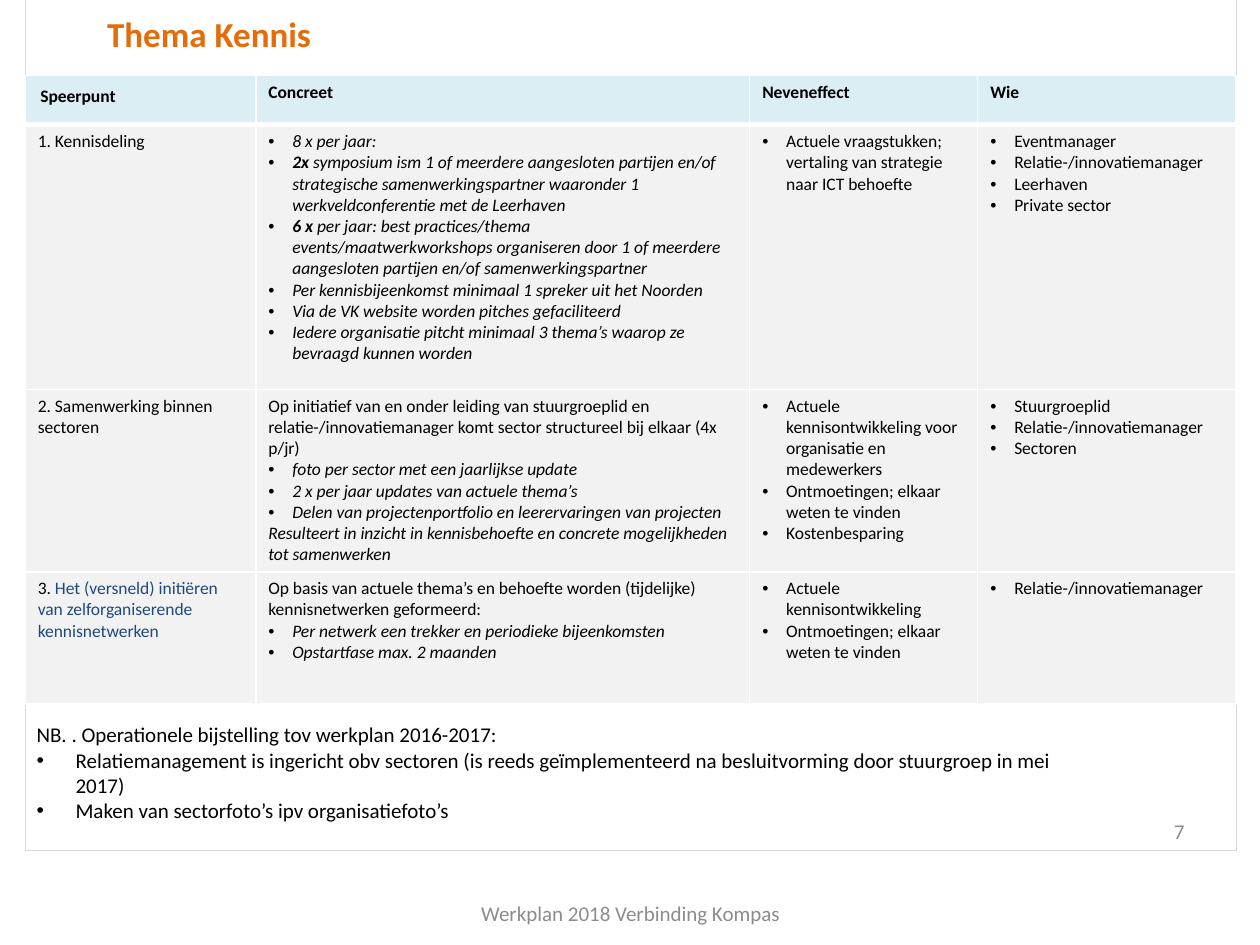
"""Build the knowledge theme slide of a work plan: title, table of priorities, notes and footer."""
from lxml import etree
from pptx import Presentation
from pptx import util as u
from pptx.dml.color import RGBColor
from pptx.enum import shapes, text
from pptx.oxml import ns

WIDTH, HEIGHT = 10, 7.5
FONT = "Calibri"
COLORS = {
    "title": "E46C0A", "text": "000000", "accent": "1F497D", "muted": "8C8C8C",
    "header": "DBEEF4", "body": "F2F2F2", "border": "FFFFFF", "frame": "D9D9D9",
}
COLUMNS = (18.3, 39.2, 18.1, 20.5)
ROWS = (5.2, 28, 19.1, 14)
HEADERS = ("Speerpunt", "Concreet", "Neveneffect", "Wie")


def across(percent):
    return u.Inches(WIDTH * percent / 100)


def down(percent):
    return u.Inches(HEIGHT * percent / 100)


def color(name):
    return RGBColor.from_string(COLORS[name])


def plain(*runs):
    return False, runs


def bullet(*runs):
    return True, runs


def bullets(*lines):
    return [bullet(line) for line in lines]


def italic(line):
    return line, {"italic": True}


def strong(line):
    return line, {"italic": True, "bold": True}


def italic_bullets(*lines):
    return [bullet(italic(line)) for line in lines]


CONTENT = (
    (
        [plain("1. Kennisdeling")],
        [
            bullet(italic("8 x per jaar:")),
            bullet(strong("2x "), italic(
                "symposium ism 1 of meerdere aangesloten partijen en/of strategische "
                "samenwerkingspartner waaronder 1 werkveldconferentie met de Leerhaven")),
            bullet(strong("6 x "), italic(
                "per jaar: best practices/thema events/maatwerkworkshops organiseren door "
                "1 of meerdere aangesloten partijen en/of samenwerkingspartner")),
            *italic_bullets(
                "Per kennisbijeenkomst minimaal 1 spreker uit het Noorden",
                "Via de VK website worden pitches gefaciliteerd",
                "Iedere organisatie pitcht minimaal 3 thema’s waarop ze bevraagd kunnen worden"),
        ],
        bullets("Actuele vraagstukken; vertaling van strategie naar ICT behoefte"),
        bullets("Eventmanager", "Relatie-/innovatiemanager", "Leerhaven", "Private sector"),
    ),
    (
        [plain("2. Samenwerking binnen sectoren")],
        [
            plain("Op initiatief van en onder leiding van stuurgroeplid en "
                  "relatie-/innovatiemanager komt sector structureel bij elkaar (4x p/jr)"),
            *italic_bullets(
                "foto per sector met een jaarlijkse update",
                "2 x per jaar updates van actuele thema’s",
                "Delen van projectenportfolio en leerervaringen van projecten"),
            plain(italic("Resulteert in inzicht in kennisbehoefte en concrete "
                         "mogelijkheden tot samenwerken")),
        ],
        bullets("Actuele kennisontwikkeling voor organisatie en medewerkers",
                "Ontmoetingen; elkaar weten te vinden", "Kostenbesparing"),
        bullets("Stuurgroeplid", "Relatie-/innovatiemanager", "Sectoren"),
    ),
    (
        [plain("3. ", ("Het (versneld) initiëren van zelforganiserende kennisnetwerken",
                       {"ink": "accent"}))],
        [
            plain("Op basis van actuele thema’s en behoefte worden (tijdelijke) "
                  "kennisnetwerken geformeerd:"),
            *italic_bullets("Per netwerk een trekker en periodieke bijeenkomsten",
                            "Opstartfase max. 2 maanden"),
        ],
        bullets("Actuele kennisontwikkeling", "Ontmoetingen; elkaar weten te vinden"),
        bullets("Relatie-/innovatiemanager"),
    ),
)
NOTES = [
    plain("NB. . Operationele bijstelling tov werkplan 2016-2017:"),
    *bullets("Relatiemanagement is ingericht obv sectoren (is reeds geïmplementeerd na "
             "besluitvorming door stuurgroep in mei 2017)",
             "Maken van sectorfoto’s ipv organisatiefoto’s"),
]


def add_run(paragraph, line, size, ink="text", bold=False, italic=False):
    run = paragraph.add_run()
    run.text = line
    font = run.font
    font.name, font.size, font.bold, font.italic = FONT, u.Pt(size), bold, italic
    font.color.rgb = color(ink)


def set_marker(paragraph, bulleted, indent):
    properties = paragraph._p.get_or_add_pPr()
    hang = u.Inches(indent) if bulleted else 0
    properties.set("marL", str(hang))
    properties.set("indent", str(-hang))
    if bulleted:
        etree.SubElement(properties, ns.qn("a:buFont"), typeface="Arial")
        etree.SubElement(properties, ns.qn("a:buChar"), char="•")
    else:
        etree.SubElement(properties, ns.qn("a:buNone"))


def fill_text(frame, paragraphs, size, indent=0.19, align=text.PP_ALIGN.LEFT, **style):
    for index, (bulleted, runs) in enumerate(paragraphs):
        paragraph = frame.add_paragraph() if index else frame.paragraphs[0]
        paragraph.alignment = align
        paragraph.space_before = u.Pt(0)
        set_marker(paragraph, bulleted, indent)
        for run in runs:
            line, extra = (run, {}) if isinstance(run, str) else run
            add_run(paragraph, line, size, **{**style, **extra})


def place(shape, left, top, width, height, anchor=text.MSO_ANCHOR.TOP):
    shape.left, shape.top = across(left), down(top)
    shape.width, shape.height = across(width), down(height)
    frame = shape.text_frame
    frame.word_wrap = True
    frame.auto_size = text.MSO_AUTO_SIZE.NONE
    frame.vertical_anchor = anchor
    return frame


def add_frame(slide):
    shape = slide.shapes.add_shape(
        shapes.MSO_SHAPE.RECTANGLE, across(2), down(-5.6), across(96.1), down(95.6))
    shape.shadow.inherit = False
    shape.fill.background()
    shape.line.color.rgb = color("frame")
    shape.line.width = u.Pt(0.25)


def add_label(slide, line, left, top, width, align):
    shape = slide.shapes.add_textbox(0, 0, 0, 0)
    frame = place(shape, left, top, width, 5.33, text.MSO_ANCHOR.MIDDLE)
    fill_text(frame, [plain(line)], 12, align=align, ink="muted")


def style_cell(cell, fill, bottom=1):
    properties = cell._tc.get_or_add_tcPr()
    for side, width in (("L", 1), ("R", 1), ("T", 1), ("B", bottom)):
        line = etree.SubElement(properties, ns.qn(f"a:ln{side}"), w=str(u.Pt(width)))
        solid = etree.SubElement(line, ns.qn("a:solidFill"))
        etree.SubElement(solid, ns.qn("a:srgbClr"), val=COLORS["border"])
    cell.fill.solid()
    cell.fill.fore_color.rgb = color(fill)


def add_priorities(slide):
    table = slide.shapes.add_table(
        len(ROWS), len(COLUMNS), across(2), down(8), across(sum(COLUMNS)), down(sum(ROWS))).table
    for column, width in zip(table.columns, COLUMNS):
        column.width = across(width)
    for row, height in zip(table.rows, ROWS):
        row.height = down(height)
    for cell, header in zip(table.rows[0].cells, HEADERS):
        style_cell(cell, "header", bottom=3)
        fill_text(cell.text_frame, [plain(header)], 10, bold=True)
    first = table.cell(0, 0)
    first.margin_left, first.margin_top = u.Inches(0.12), u.Inches(0.08)
    first.margin_right = u.Inches(0.2)
    for row, contents in enumerate(CONTENT, start=1):
        for column, paragraphs in enumerate(contents):
            cell = table.cell(row, column)
            style_cell(cell, "body")
            fill_text(cell.text_frame, paragraphs, 10)
    table.cell(1, 1).margin_right = u.Inches(0.14)


def main():
    presentation = Presentation()
    presentation.slide_width, presentation.slide_height = across(100), down(100)
    slide = presentation.slides.add_slide(presentation.slide_layouts[1])
    add_frame(slide)
    title = place(slide.shapes.title, 7.5, 0.67, 86.6, 5.87)
    fill_text(title, [plain("Thema Kennis")], 20, ink="title", bold=True)
    add_priorities(slide)
    add_label(slide, "7", 71.7, 85.33, 23.3, text.PP_ALIGN.RIGHT)
    add_label(slide, "Werkplan 2018 Verbinding Kompas", 34.2, 94, 31.7, text.PP_ALIGN.CENTER)
    notes = place(slide.placeholders[1], 1.9, 75.73, 83.5, 12.13)
    fill_text(notes, NOTES, 12, indent=0.31)
    presentation.save("out.pptx")


if __name__ == "__main__":
    main()
